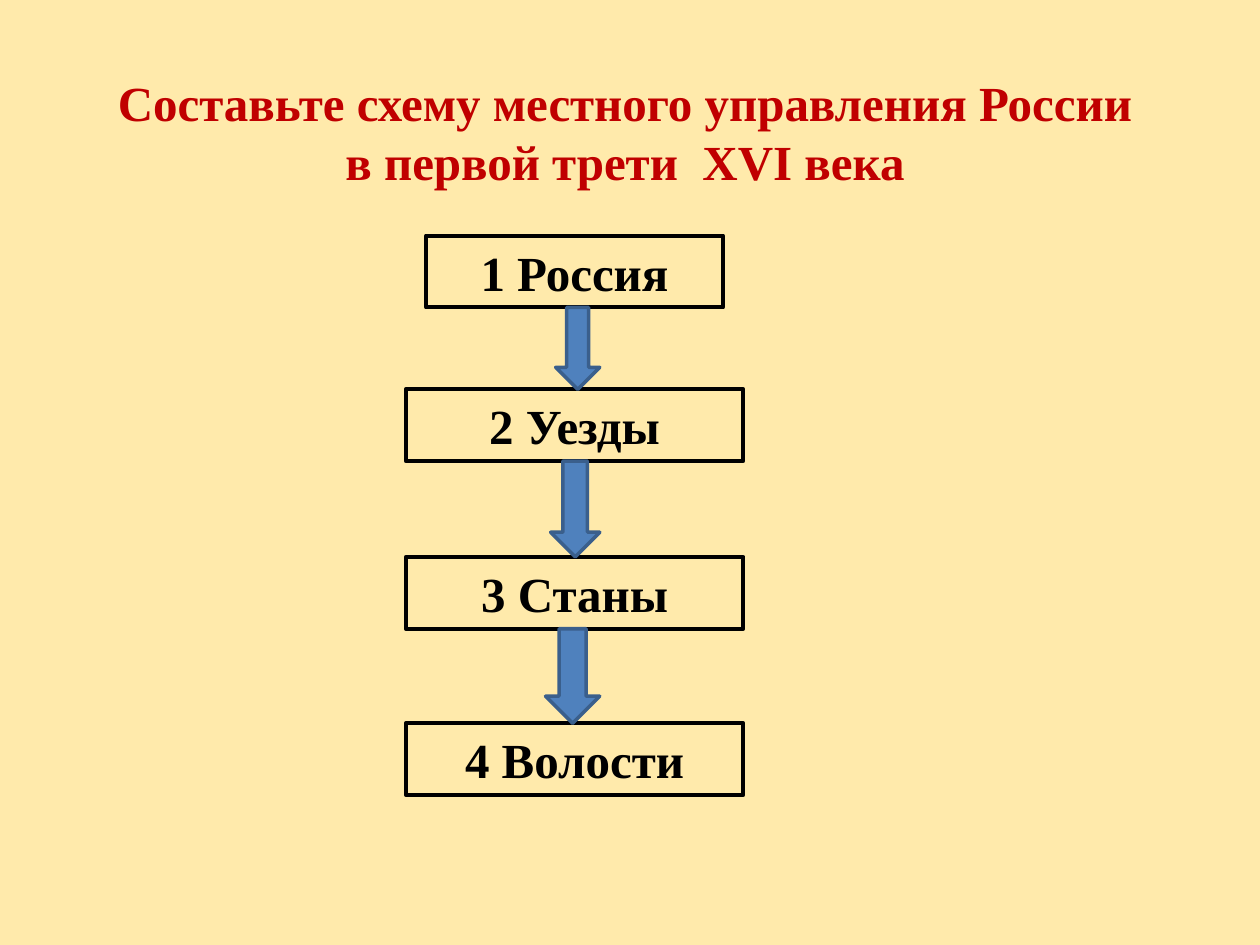
from pptx import Presentation
from pptx.dml.color import RGBColor
from pptx.enum.shapes import MSO_SHAPE
from pptx.enum.text import MSO_ANCHOR, MSO_AUTO_SIZE, PP_ALIGN
from pptx.util import Inches, Pt

FONT = {"name": "Times New Roman", "size": Pt(28), "bold": True}
FRAME = {"word_wrap": True, "auto_size": MSO_AUTO_SIZE.NONE,
         "vertical_anchor": MSO_ANCHOR.MIDDLE,
         "margin_left": Inches(0.1), "margin_right": Inches(0.1),
         "margin_top": Inches(0.05), "margin_bottom": Inches(0.05)}
LEVELS = [  # text, left, top, width
    ("1 Россия", 3.38, 1.87, 2.36),
    ("2 Уезды", 3.22, 3.09, 2.68),
    ("3 Станы", 3.22, 4.42, 2.68),
    ("4 Волости", 3.22, 5.74, 2.68),
]
HIGH = 0.57      # height of a level box
EDGE = 4.76      # common right edge of the arrows


def paint(part, color):
    """Give a fill or a font one solid colour."""
    if hasattr(part, "solid"):
        part.solid()
        part = part.fore_color
    else:
        part = part.color
    part.rgb = RGBColor.from_string(color)


def style(item, values):
    for key, value in values.items():
        setattr(item, key, value)


def write(shape, lines, color):
    frame = shape.text_frame
    frame.text = "\n".join(lines)
    style(frame, FRAME)
    for par in frame.paragraphs:
        style(par, {"alignment": PP_ALIGN.CENTER, "line_spacing": 1.0,
                    "space_before": Pt(0)})
        for run in par.runs:
            style(run.font, FONT)
            paint(run.font, color)


def add_form(slide, kind, box, edge, width, fill=None):
    shape = slide.shapes.add_shape(kind, *map(Inches, box))
    shape.shadow.inherit = False
    if fill:
        paint(shape.fill, fill)
    else:
        shape.fill.background()
    paint(shape.line.fill, edge)
    shape.line.width = Pt(width)
    return shape


def add_title(slide, box):
    title = slide.shapes.title
    style(title, dict(zip(("left", "top", "width", "height"),
                          map(Inches, box))))
    write(title, ["Составьте схему местного управления России",
                  "в первой трети  XVI века"], "C00000")


def add_level(slide, text, box):
    shape = add_form(slide, MSO_SHAPE.RECTANGLE, box, "000000", 2.25)
    write(shape, [text], "000000")


def add_arrow(slide, box):
    add_form(slide, MSO_SHAPE.DOWN_ARROW, box, "3A5F8C", 2, "4F81BD")


def main():
    deck = Presentation()
    deck.slide_width, deck.slide_height = Inches(10), Inches(7.5)
    slide = deck.slides.add_slide(deck.slide_layouts[5])
    paint(slide.background.fill, "FFEAAB")

    add_title(slide, (0.51, 0.52, 8.9, 1.04))

    # Levels of government
    for text, left, top, width in LEVELS:
        add_level(slide, text, (left, top, width, HIGH))

    # Arrows fill the gaps, each a little wider than the last
    tops = [level[2] for level in LEVELS]
    for num, (top, below) in enumerate(zip(tops, tops[1:])):
        wide = 0.35 + 0.04 * num
        start = top + HIGH
        add_arrow(slide, (EDGE - wide, start, wide, below - start))

    deck.save("out.pptx")


if __name__ == "__main__":
    main()
